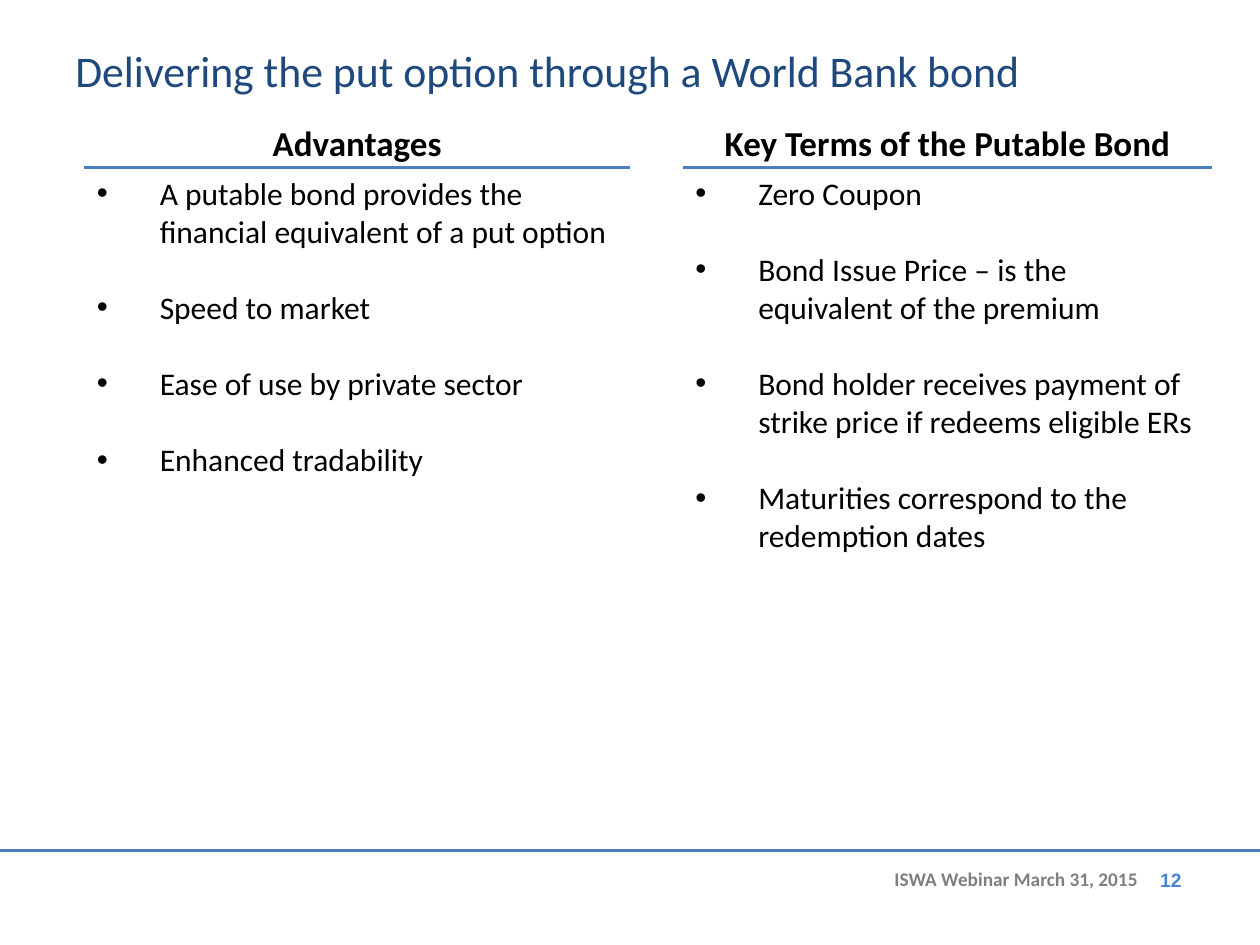
from lxml.etree import SubElement
from pptx import Presentation
from pptx.dml.color import RGBColor
from pptx.enum.shapes import MSO_CONNECTOR
from pptx.enum.text import MSO_ANCHOR, PP_ALIGN
from pptx.oxml.ns import qn
from pptx.util import Inches, Pt

COLORS = {
    "title": "1F497D",
    "text": "000000",
    "rule": "4B7EBC",
    "footer": "7F7F7F",
    "number": "4785D1",
}


def add_text(slide, box, lines, color, size, font="Calibri", bold=False,
             align=PP_ALIGN.LEFT, anchor=MSO_ANCHOR.TOP, bulleted=False):
    shape = slide.shapes.add_textbox(*[Inches(value) for value in box])
    frame = shape.text_frame
    frame.word_wrap = True
    frame.vertical_anchor = anchor
    font_format = {"name": font, "size": Pt(size), "bold": bold}
    for index, line in enumerate(lines):
        paragraph = frame.paragraphs[0] if index == 0 else frame.add_paragraph()
        paragraph.alignment = align
        if index:
            paragraph.space_before = Pt(22)
        if bulleted:
            properties = paragraph._p.get_or_add_pPr()
            properties.set("marL", str(Inches(0.5)))
            properties.set("indent", str(Inches(-0.5)))
            SubElement(properties, qn("a:buFont")).set("typeface", "Arial")
            SubElement(properties, qn("a:buChar")).set("char", "•")
        run = paragraph.add_run()
        run.text = line
        for name, value in font_format.items():
            setattr(run.font, name, value)
        run.font.color.rgb = RGBColor.from_string(COLORS[color])


def add_rule(slide, left, right, top, width):
    rule = slide.shapes.add_connector(
        MSO_CONNECTOR.STRAIGHT, Inches(left), Inches(top), Inches(right), Inches(top))
    rule.line.color.rgb = RGBColor.from_string(COLORS["rule"])
    rule.line.width = Pt(width)
    SubElement(rule._element.spPr, qn("a:effectLst"))


presentation = Presentation()
presentation.slide_width = Inches(10)
presentation.slide_height = Inches(7.5)
slide = presentation.slides.add_slide(presentation.slide_layouts[6])

add_rule(slide, 0, 10, 6.75, 1.5)
add_text(slide, (3.42, 6.83, 5.71, 0.29), ["ISWA Webinar March 31, 2015"],
         "footer", 11, bold=True, align=PP_ALIGN.RIGHT)
add_text(slide, (9.11, 6.84, 0.44, 0.35), ["12"], "number", 11, font="Arial", bold=True)
add_text(slide, (0.5, 0.3, 8.92, 0.52),
         ["Delivering the put option through a World Bank bond"], "title", 25)

columns = [
    ("Advantages", 0.67, 4.33, 2.83, [
        "A putable bond provides the financial equivalent of a put option",
        "Speed to market",
        "Ease of use by private sector",
        "Enhanced tradability",
    ]),
    ("Key Terms of the Putable Bond", 5.42, 4.2, 3.43, [
        "Zero Coupon",
        "Bond Issue Price – is the equivalent of the premium",
        "Bond holder receives payment of strike price if redeems eligible ERs",
        "Maturities correspond to the redemption dates",
    ]),
]
for heading, left, width, height, points in columns:
    add_text(slide, (left, 0.92, width, 0.42), [heading], "text", 20, bold=True,
             align=PP_ALIGN.CENTER, anchor=MSO_ANCHOR.MIDDLE)
    add_text(slide, (left, 1.33, width, height), points, "text", 18, bulleted=True)
    add_rule(slide, left, left + width, 1.33, 2)

presentation.save("out.pptx")
